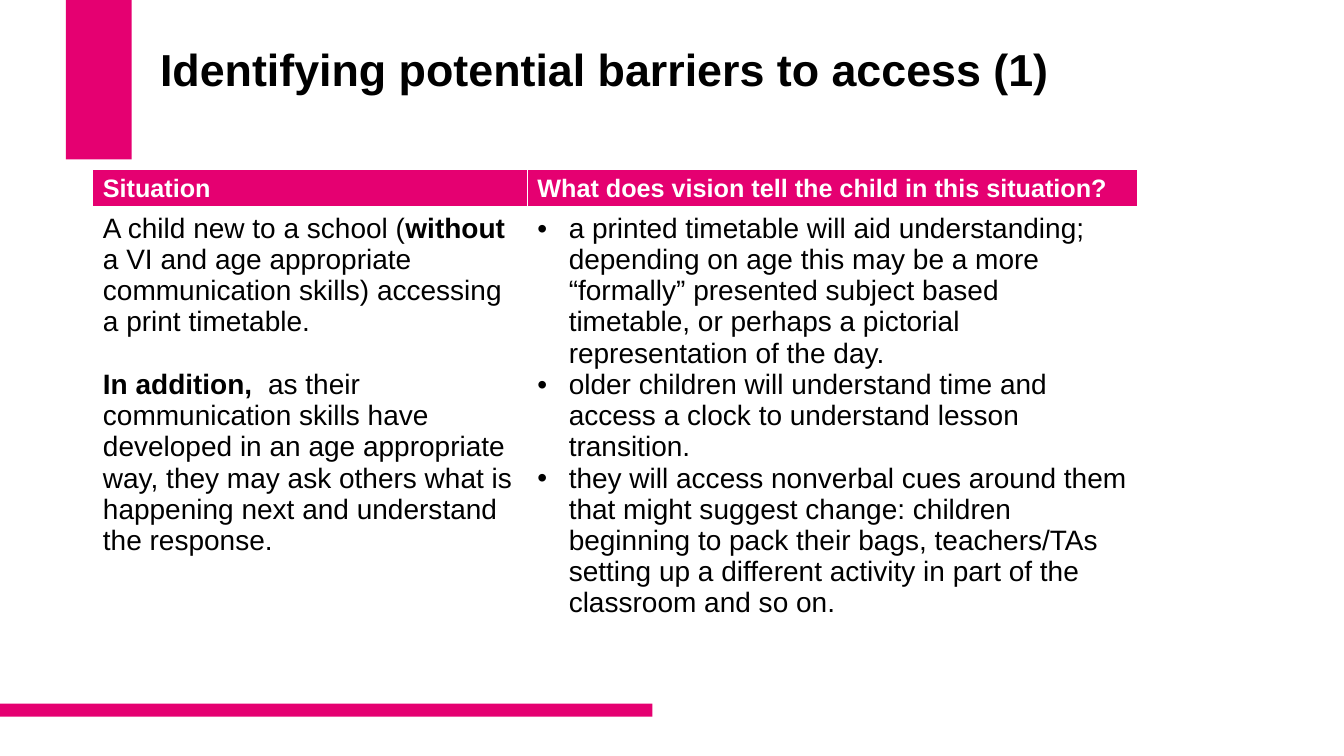
from lxml.etree import SubElement as Sub
from pptx import Presentation
from pptx.dml.color import RGBColor as Rgb
from pptx.enum.shapes import MSO_SHAPE as Kind
from pptx.enum.text import MSO_ANCHOR as Anchor, PP_ALIGN as Align
from pptx.oxml.ns import qn
from pptx.util import Cm, Pt

PINK = Rgb(0xE5, 0x00, 0x71)
WHITE = Rgb(0xFF, 0xFF, 0xFF)
BLACK = Rgb(0x00, 0x00, 0x00)
FONT = "Arial"

TITLE = "Identifying potential barriers to access (1)"
HEADS = ["Situation", "What does vision tell the child in this situation?"]
STORY = [
    [("A child new to a school (", False), ("without", True),
     (" a VI and age appropriate communication skills) accessing a print "
      "timetable.", False)],
    [("In addition, ", True),
     (" as their communication skills have developed in an age appropriate "
      "way, they may ask others what is happening next and understand the "
      "response.", False)],
]
CUES = [
    "a printed timetable will aid understanding; depending on age this may be "
    "a more “formally” presented subject based timetable, or perhaps a "
    "pictorial representation of the day.",
    "older children will understand time and access a clock to understand "
    "lesson transition.",
    "they will access nonverbal cues around them that might suggest change: "
    "children beginning to pack their bags, teachers/TAs setting up a "
    "different activity in part of the classroom and so on.",
]


def add_run(para, text, size, color, bold=False):
    run = para.add_run()
    run.text = text
    font = run.font
    font.name, font.size, font.bold = FONT, Pt(size), bold
    font.color.rgb = color


def add_bar(slide, left, top, width, height):
    bar = slide.shapes.add_shape(
        Kind.RECTANGLE, Cm(left), Cm(top), Cm(width), Cm(height))
    bar.shadow.inherit = False
    bar.fill.solid()
    bar.fill.fore_color.rgb = PINK
    bar.line.fill.background()


def set_title(slide):
    title = slide.shapes.title
    title.left, title.top = Cm(3.78), Cm(1.02)
    title.width, title.height = Cm(24.38), Cm(2.72)
    frame = title.text_frame
    frame.word_wrap = True
    frame.vertical_anchor = Anchor.TOP
    frame.margin_top = Cm(0.18)
    para = frame.paragraphs[0]
    para.alignment = Align.LEFT
    para.line_spacing = 0.9
    add_run(para, TITLE, 32, BLACK, True)


def add_edges(cell, base):
    props = cell._tc.get_or_add_tcPr()
    for side, width in (("L", 1), ("R", 1), ("T", 1), ("B", base)):
        edge = Sub(props, qn("a:ln" + side), w=str(Pt(width)))
        Sub(Sub(edge, qn("a:solidFill")), qn("a:srgbClr"), val=str(WHITE))


def fill_cell(cell, color, base=1):
    add_edges(cell, base)
    cell.fill.solid()
    cell.fill.fore_color.rgb = color


def next_para(frame, index):
    return frame.add_paragraph() if index else frame.paragraphs[0]


def add_story(cell):
    for i, parts in enumerate(STORY):
        para = next_para(cell.text_frame, i)
        if i:
            para.space_before = Pt(22.3)
        for text, bold in parts:
            add_run(para, text, 20, BLACK, bold)


def add_cues(cell):
    for i, text in enumerate(CUES):
        para = next_para(cell.text_frame, i)
        props = para._p.get_or_add_pPr()
        props.set("marL", str(Cm(0.79)))
        props.set("indent", str(-Cm(0.79)))
        Sub(props, qn("a:buFont"), typeface=FONT)
        Sub(props, qn("a:buChar"), char="•")
        add_run(para, text, 20, BLACK)


def add_grid(slide):
    grid = slide.shapes.add_table(
        2, 2, Cm(2.34), Cm(4.27), Cm(26.32), Cm(12.34)).table
    for col, width in zip(grid.columns, (10.95, 15.37)):
        col.width = Cm(width)
    for row, height in zip(grid.rows, (0.91, 11.43)):
        row.height = Cm(height)
    for i, head in enumerate(HEADS):
        top, body = grid.cell(0, i), grid.cell(1, i)
        fill_cell(top, PINK, 3)
        fill_cell(body, WHITE)
        add_run(top.text_frame.paragraphs[0], head, 18, WHITE, True)
    add_story(grid.cell(1, 0))
    add_cues(grid.cell(1, 1))


def main():
    deck = Presentation()
    deck.slide_width, deck.slide_height = Cm(33.87), Cm(19.05)
    slide = deck.slides.add_slide(deck.slide_layouts[5])
    add_bar(slide, 1.66, 0, 1.66, 4.02)
    add_bar(slide, 0, 17.73, 16.44, 0.33)
    set_title(slide)
    add_grid(slide)
    deck.save("out.pptx")


if __name__ == "__main__":
    main()
